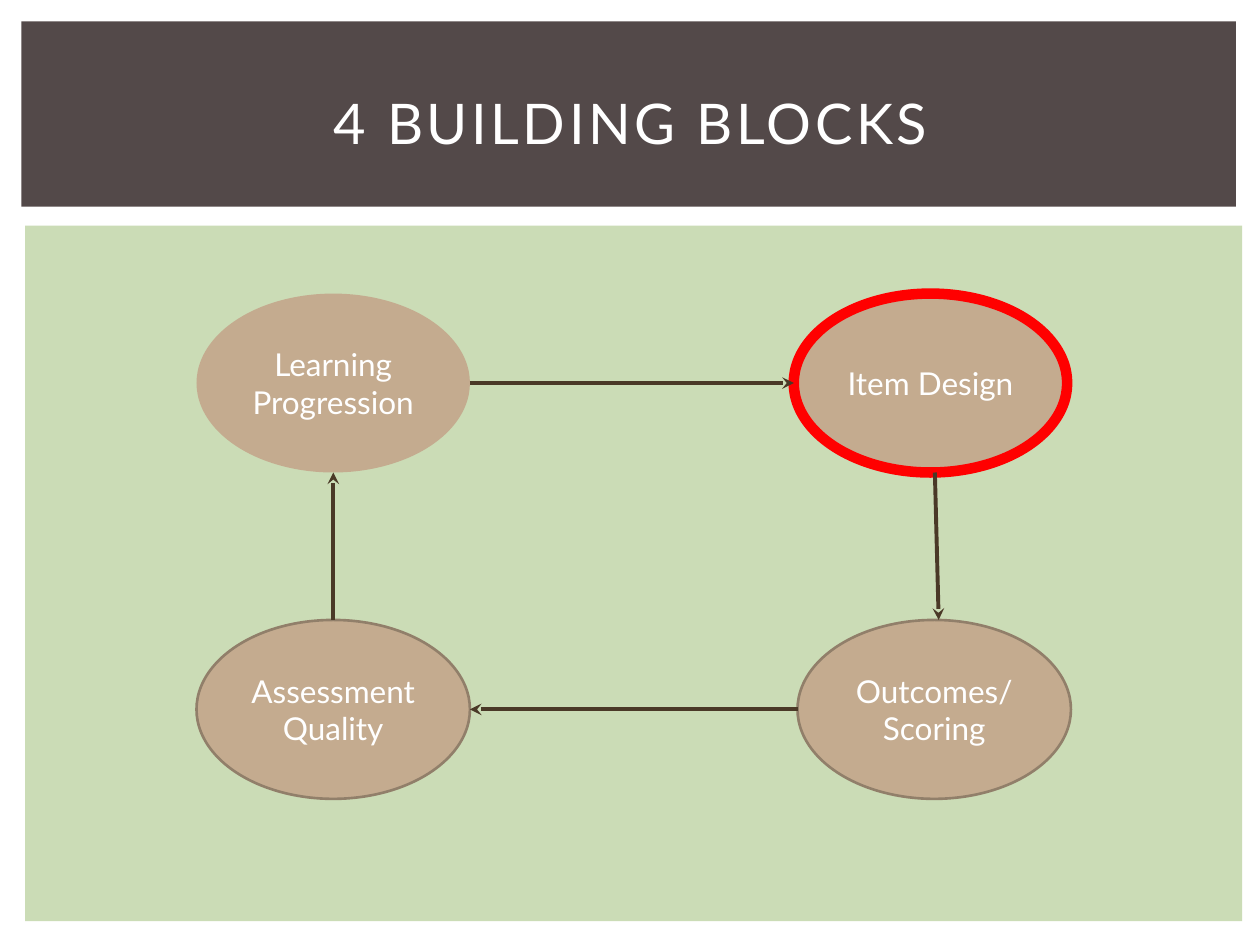
from pptx import Presentation
from pptx.dml.color import RGBColor
from pptx.enum.shapes import MSO_CONNECTOR, MSO_SHAPE
from pptx.enum.text import MSO_ANCHOR, PP_ALIGN
from pptx.oxml.ns import qn
from pptx.util import Inches, Pt
from lxml.etree import SubElement

WHITE = RGBColor(0xFF, 0xFF, 0xFF)
GREEN = RGBColor(0xCB, 0xDC, 0xB6)
BROWN = RGBColor(0x53, 0x49, 0x49)
TAN = RGBColor(0xC4, 0xAB, 0x8F)
EDGE = RGBColor(0x91, 0x7F, 0x6A)
RED = RGBColor(0xFF, 0x00, 0x00)
DARK = RGBColor(0x4A, 0x39, 0x27)

WIDE, HIGH = 2.17, 1.42
LEFT, TOP, LOW = 1.56, 2.33, 4.92
BLOCKS = [
    ("Learning Progression", LEFT, TOP, None, 0),
    ("Item Design", 6.3, TOP, RED, 6),
    ("Outcomes/Scoring", 6.33, LOW, EDGE, 1.5),
    ("Assessment Quality", LEFT, LOW, EDGE, 1.5),
]
MID = LEFT + WIDE / 2
ARROWS = [
    (LEFT + WIDE, TOP + HIGH / 2, 6.3, TOP + HIGH / 2),
    (7.42, TOP + HIGH, 7.45, LOW),
    (6.33, LOW + HIGH / 2, LEFT + WIDE, LOW + HIGH / 2),
    (MID, LOW, MID, TOP + HIGH),
]


def add_form(slide, kind, box, fill, line=None, width=0):
    """Add a filled shape with an optional outline."""
    form = slide.shapes.add_shape(kind, *map(Inches, box))
    form.shadow.inherit = False
    form.fill.solid()
    form.fill.fore_color.rgb = fill
    if line is None:
        form.line.fill.background()
    else:
        form.line.color.rgb = line
        form.line.width = Pt(width)
    return form


def set_text(shape, text, size):
    """Write centred white text in a shape."""
    frame = shape.text_frame
    frame.text = text
    frame.word_wrap = True
    frame.vertical_anchor = MSO_ANCHOR.MIDDLE
    para = frame.paragraphs[0]
    para.alignment = PP_ALIGN.CENTER
    font = para.runs[0].font
    for name, value in {"name": "Lato", "size": Pt(size)}.items():
        setattr(font, name, value)
    font.color.rgb = WHITE
    return para.runs[0]


def add_arrow(slide, ends):
    """Add a straight arrow pointing at its end."""
    arrow = slide.shapes.add_connector(MSO_CONNECTOR.STRAIGHT, *map(Inches, ends))
    arrow.line.color.rgb = DARK
    arrow.line.width = Pt(2.25)
    SubElement(arrow.line._get_or_add_ln(), qn("a:tailEnd"), type="stealth")
    SubElement(arrow.element.spPr, qn("a:effectLst"))


def add_head(slide, box):
    """Draw the title band and lay the title over it."""
    left, top, wide, high = box
    add_form(slide, MSO_SHAPE.RECTANGLE, box, BROWN)
    title = slide.shapes.title
    slide.shapes.element.append(title.element)
    place = {"left": left + 0.25, "top": top + 0.22,
             "width": wide - 0.47, "height": high - 0.32}
    for name, value in place.items():
        setattr(title, name, Inches(value))
    run = set_text(title, "4 BUILDING BLOCKS", 32)
    run.font._element.set("spc", "200")


def add_cycle(slide, box):
    """Draw the panel with the four blocks and the arrows between them."""
    add_form(slide, MSO_SHAPE.RECTANGLE, box, GREEN)
    for text, left, top, line, width in BLOCKS:
        spot = (left, top, WIDE, HIGH)
        block = add_form(slide, MSO_SHAPE.OVAL, spot, TAN, line, width)
        set_text(block, text, 18)
    for ends in ARROWS:
        add_arrow(slide, ends)


def main():
    """Build and save the slide."""
    deck = Presentation()
    deck.slide_width, deck.slide_height = Inches(10), Inches(7.5)
    slide = deck.slides.add_slide(deck.slide_layouts[5])
    add_head(slide, (0.17, 0.17, 9.64, 1.47))
    add_cycle(slide, (0.2, 1.79, 9.66, 5.52))
    deck.save("out.pptx")


if __name__ == "__main__":
    main()
